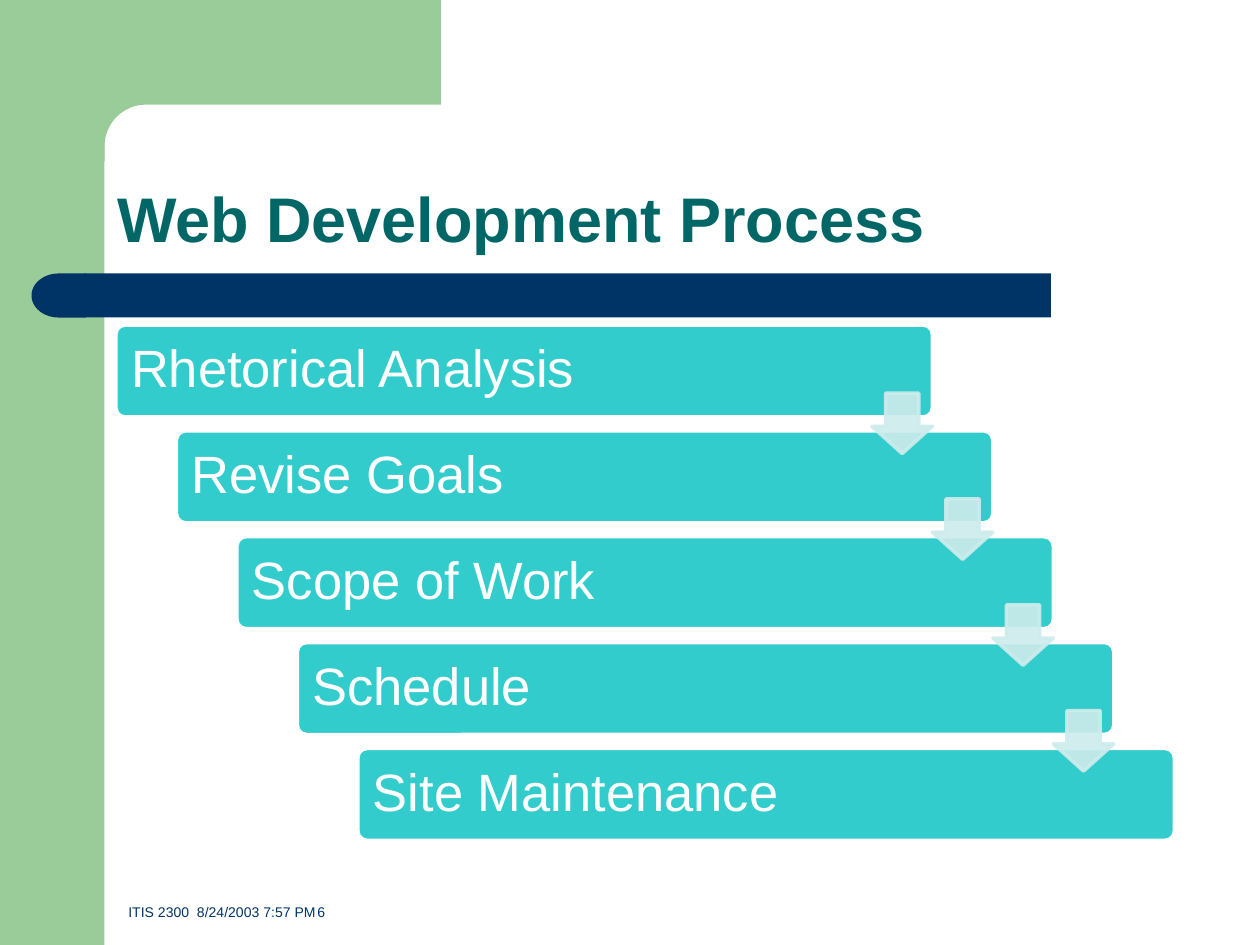
"""Build the Web Development Process slide: a staircase of steps joined by arrows."""
from math import cos, pi, sin

from lxml.etree import SubElement
from pptx import Presentation
from pptx.dml.color import RGBColor
from pptx.enum.shapes import MSO_SHAPE
from pptx.enum.text import MSO_ANCHOR, MSO_AUTO_SIZE, PP_ALIGN
from pptx.oxml.ns import qn
from pptx.util import Inches, Pt

TITLE = "Web Development Process"
STEPS = ["Rhetorical Analysis", "Revise Goals", "Scope of Work", "Schedule", "Site Maintenance"]
FOOTER = "ITIS 2300  8/24/2003 7:57 PM\t6"

THEME = {
    "font": "Arial",
    "green": "99CC99", "navy": "003366", "teal": "006666",
    "step": "33CCCC", "arrow": "CEECEC", "white": "FFFFFF",
    "title_size": 36, "step_size": 30, "footer_size": 8,
    "line_width": 2, "arrow_opacity": 90,
}

STEP_LEFT, STEP_TOP, STEP_WIDTH, STEP_HEIGHT = 0.92, 2.58, 6.48, 0.73
SHIFT_X, SHIFT_Y = 0.48, 0.84
ARROW_SIZE, ARROW_DROP = 0.48, 0.54
CORNER_X, CORNER_Y, CORNER_RADIUS = 0.83, 0.83, 0.33


def color(name):
    return RGBColor.from_string(THEME[name])


def paint(shape, fill, line=None):
    shape.shadow.inherit = False
    shape.fill.solid()
    shape.fill.fore_color.rgb = color(fill)
    if line:
        shape.line.color.rgb = color(line)
        shape.line.width = Pt(THEME["line_width"])
    else:
        shape.line.fill.background()


def add_block(slide, kind, box, fill, line=None, adjustments=()):
    shape = slide.shapes.add_shape(kind, *map(Inches, box))
    for index, value in enumerate(adjustments):
        shape.adjustments[index] = value
    paint(shape, fill, line)
    return shape


def write(shape, text, anchor, size, ink, bold=False, spacing=1.0, inset=None):
    frame = shape.text_frame
    frame_format = {"word_wrap": True, "auto_size": MSO_AUTO_SIZE.NONE, "vertical_anchor": anchor}
    if inset is not None:
        for side in ("left", "top", "right", "bottom"):
            frame_format[f"margin_{side}"] = Inches(inset)
    for name, value in frame_format.items():
        setattr(frame, name, value)
    frame.text = text
    paragraph = frame.paragraphs[0]
    paragraph.alignment = PP_ALIGN.LEFT
    paragraph.line_spacing = spacing
    font = paragraph.runs[0].font
    font_format = {"name": THEME["font"], "size": Pt(THEME[size]), "bold": bold}
    for name, value in font_format.items():
        setattr(font, name, value)
    font.color.rgb = color(ink)


def set_opacity(shape, percent):
    for element in shape._element.spPr.iter(qn("a:srgbClr")):
        SubElement(element, qn("a:alpha")).set("val", str(percent * 1000))


def add_corner(slide):
    center_x, center_y = CORNER_X + CORNER_RADIUS, CORNER_Y + CORNER_RADIUS
    angles = [pi / 2 * step / 12 for step in range(13)]
    arc = [(center_x - CORNER_RADIUS * sin(angle), center_y - CORNER_RADIUS * cos(angle))
           for angle in angles]
    outline = [(3.5, 0), (3.5, CORNER_Y), *arc, (CORNER_X, 1.28), (0.5, 1.28), (0.5, 0)]
    points = [(Inches(x), Inches(y)) for x, y in outline]
    builder = slide.shapes.build_freeform(*points[0])
    builder.add_line_segments(points[1:], close=True)
    paint(builder.convert_to_shape(), "green")


def add_frame(slide):
    add_block(slide, MSO_SHAPE.RECTANGLE, (0, 0, 0.83, 7.5), "green")
    add_corner(slide)
    add_block(slide, MSO_SHAPE.RECTANGLE, (0.67, 2.17, 7.67, 0.35), "navy")
    cap = add_block(slide, MSO_SHAPE.FLOWCHART_DELAY, (0.25, 2.17, 0.43, 0.35), "navy")
    cap.rotation = 180


def add_title(slide):
    title = slide.shapes.title
    box = {"left": 0.83, "top": 0.83, "width": 8.67, "height": 1.25}
    for name, value in box.items():
        setattr(title, name, Inches(value))
    write(title, TITLE, MSO_ANCHOR.BOTTOM, "title_size", "teal", bold=True, spacing=0.9)


def add_steps(slide):
    corners = [(STEP_LEFT + SHIFT_X * index, STEP_TOP + SHIFT_Y * index)
               for index in range(len(STEPS))]
    for text, (left, top) in zip(STEPS, corners):
        bar = add_block(slide, MSO_SHAPE.ROUNDED_RECTANGLE,
                        (left, top, STEP_WIDTH, STEP_HEIGHT), "step", "white", [0.1])
        write(bar, text, MSO_ANCHOR.MIDDLE, "step_size", "white", spacing=0.9, inset=0.1)
    for left, top in corners[:-1]:
        box = (left + STEP_WIDTH - ARROW_SIZE, top + ARROW_DROP, ARROW_SIZE, ARROW_SIZE)
        arrow = add_block(slide, MSO_SHAPE.DOWN_ARROW, box, "arrow", "arrow", [0.55, 0.45])
        set_opacity(arrow, THEME["arrow_opacity"])


def main():
    presentation = Presentation()
    presentation.slide_width, presentation.slide_height = Inches(10), Inches(7.5)
    slide = presentation.slides.add_slide(presentation.slide_layouts[5])
    add_frame(slide)
    add_title(slide)
    add_steps(slide)
    footer = slide.shapes.add_textbox(*map(Inches, (0.92, 6.83, 8.59, 0.52)))
    write(footer, FOOTER, MSO_ANCHOR.BOTTOM, "footer_size", "navy")
    presentation.save("out.pptx")


if __name__ == "__main__":
    main()
